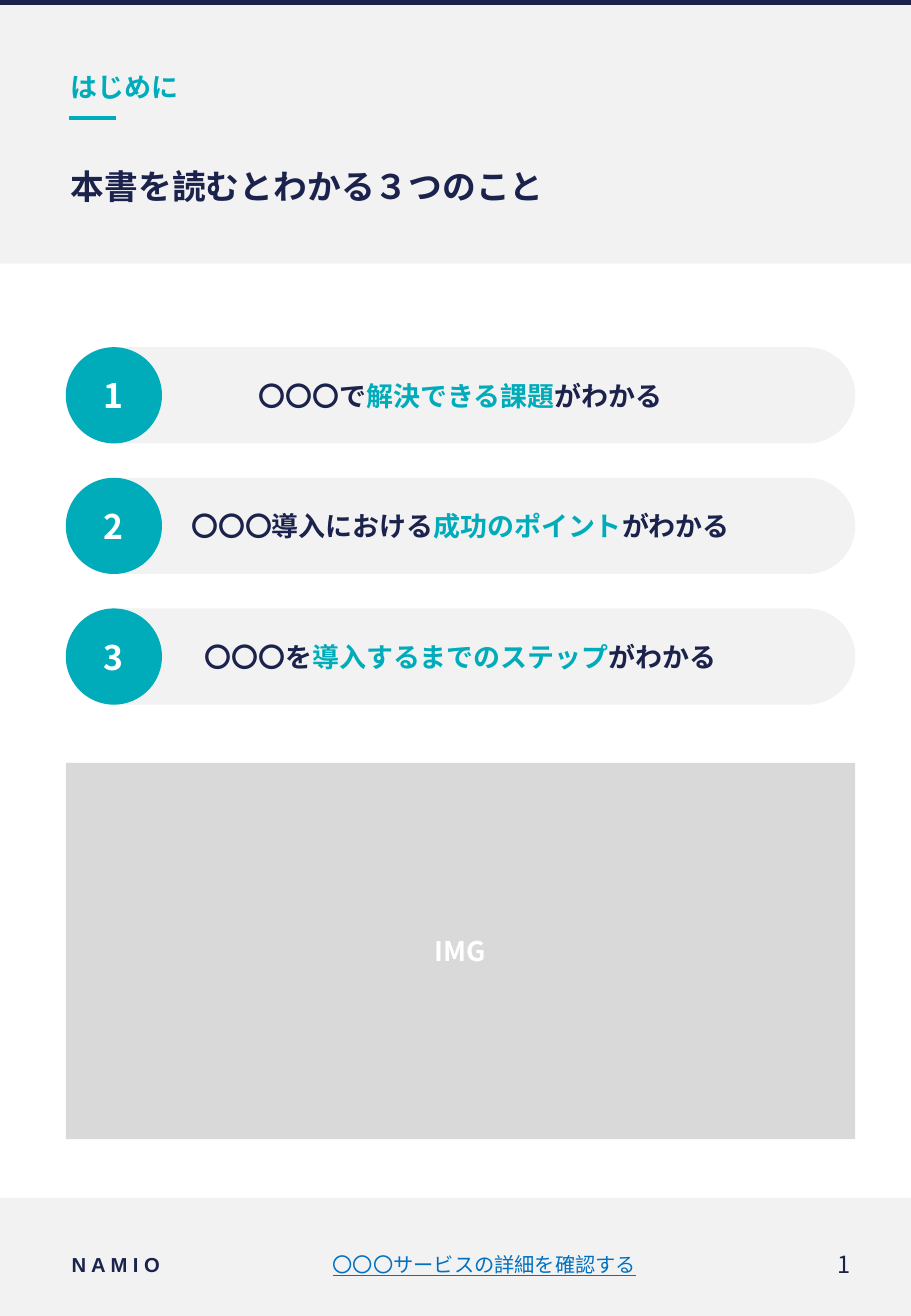
import pptx
import pptx.dml.color
import pptx.enum.shapes
import pptx.enum.text
import pptx.oxml.ns
import pptx.util
from lxml import etree

Pt = pptx.util.Pt
Shape = pptx.enum.shapes.MSO_SHAPE
Align = pptx.enum.text.PP_ALIGN

COLORS = {
    "navy": "1B224C",
    "teal": "00ACBA",
    "pale": "F2F2F2",
    "gray": "D9D9D9",
    "link": "0070C0",
    "white": "FFFFFF",
}
LATIN, JAPANESE = "Arial", "Noto Sans CJK JP"
PAGE_WIDTH, PAGE_HEIGHT = 540, 779.76
LEFT, CONTENT_WIDTH = 39, 468
ROW_TOP, ROW_HEIGHT, ROW_PITCH = 205.7, 57, 77.4
FOOTER_TOP = 709.8
THIN_INSET, WIDE_INSET = (2.9, 2.9), (7.2, 3.6)

# Each point is a list of (words, color) runs
POINTS = [
    [("〇〇〇で", "navy"), ("解決できる課題", "teal"), ("がわかる", "navy")],
    [("〇〇〇導入における", "navy"), ("成功のポイント", "teal"), ("がわかる", "navy")],
    [("〇〇〇を", "navy"), ("導入するまでのステップ", "teal"), ("がわかる", "navy")],
]


def rgb(name):
    return pptx.dml.color.RGBColor.from_string(COLORS[name])


def add_child(parent, tag, **attributes):
    return etree.SubElement(parent, pptx.oxml.ns.qn(tag), attributes)


def write(box, runs, size, align=Align.LEFT, font=LATIN, bold=True,
          underline=None, inset=THIN_INSET, wrap=True):
    """Fill the box with one paragraph made of (words, color) runs."""
    frame = box.text_frame
    frame.word_wrap = wrap
    frame.auto_size = pptx.enum.text.MSO_AUTO_SIZE.NONE
    frame.vertical_anchor = pptx.enum.text.MSO_ANCHOR.MIDDLE
    frame.margin_left = frame.margin_right = Pt(inset[0])
    frame.margin_top = frame.margin_bottom = Pt(inset[1])
    para = frame.paragraphs[0]
    para.alignment = align
    for words, color in runs:
        span = para.add_run()
        span.text = words
        span.font.size = Pt(size)
        span.font.bold = bold
        span.font.underline = underline
        span.font.color.rgb = rgb(color)
        span.font.name = font
        add_child(span.font._element, "a:ea", typeface=JAPANESE)
    return para


def add_block(page, kind, left, top, width, height, color):
    block = page.shapes.add_shape(kind, Pt(left), Pt(top), Pt(width), Pt(height))
    block.shadow.inherit = False
    block.fill.solid()
    block.fill.fore_color.rgb = rgb(color)
    block.line.fill.background()
    return block


def add_label(page, left, width, words, color, size, **style):
    box = page.shapes.add_textbox(Pt(left), Pt(738), Pt(width), Pt(22.3))
    write(box, [(words, color)], size, **style)


def place(page, holder, top, width, height):
    """Move a placeholder and bring it in front of the bands."""
    holder.left, holder.top = Pt(LEFT), Pt(top)
    holder.width, holder.height = Pt(width), Pt(height)
    page.shapes._spTree.append(holder._element)


def add_bands(page):
    for top, height, color in [(0, 156.2, "pale"), (0, 2.9, "navy"),
                               (FOOTER_TOP, PAGE_HEIGHT - FOOTER_TOP, "pale")]:
        add_block(page, Shape.RECTANGLE, 0, top, PAGE_WIDTH, height, color)


def add_heading(page):
    accent = page.shapes.add_connector(
        pptx.enum.shapes.MSO_CONNECTOR.STRAIGHT, Pt(41), Pt(69.9), Pt(69), Pt(69.9))
    accent.line.color.rgb = rgb("teal")
    accent.line.width = Pt(2.5)
    add_child(accent._element.spPr, "a:effectLst")

    section = page.placeholders[1]
    place(page, section, 37.4, CONTENT_WIDTH, 28.1)
    para = write(section, [("はじめに", "teal")], 16)
    para.space_before = Pt(7.5)
    properties = para._p.get_or_add_pPr()
    properties.set("marL", "0")
    properties.set("indent", "0")
    add_child(properties, "a:buNone")

    title = page.shapes.title
    place(page, title, 81.4, CONTENT_WIDTH, 57)
    write(title, [("本書を読むとわかる３つのこと", "navy")], 20)


def add_point(page, number, runs):
    top = ROW_TOP + (number - 1) * ROW_PITCH
    pill = add_block(page, Shape.ROUNDED_RECTANGLE,
                     LEFT, top, CONTENT_WIDTH, ROW_HEIGHT, "pale")
    pill.adjustments[0] = 0.5
    write(pill, runs, 16, align=Align.CENTER, inset=WIDE_INSET)
    badge = add_block(page, Shape.OVAL, LEFT, top, ROW_HEIGHT, ROW_HEIGHT, "teal")
    write(badge, [(str(number), "white")], 20, align=Align.CENTER,
          font=JAPANESE, inset=WIDE_INSET)


def add_footer(page):
    add_label(page, 39.6, 113, "N A M I O", "navy", 12, wrap=False)
    add_label(page, 152.6, 269.3, "〇〇〇サービスの詳細を確認する", "link", 12,
              align=Align.CENTER, bold=False, underline=True)
    add_label(page, 421.9, 85, "1", "navy", 14,
              align=Align.RIGHT, font=JAPANESE, bold=False)


def main():
    deck = pptx.Presentation()
    deck.slide_width, deck.slide_height = Pt(PAGE_WIDTH), Pt(PAGE_HEIGHT)
    page = deck.slides.add_slide(deck.slide_layouts[1])

    add_bands(page)
    add_heading(page)

    # Three numbered points
    for number, runs in enumerate(POINTS, start=1):
        add_point(page, number, runs)

    # Image area
    image_area = add_block(page, Shape.RECTANGLE, LEFT, 452, CONTENT_WIDTH, 223, "gray")
    write(image_area, [("IMG", "white")], 16, align=Align.CENTER, font=JAPANESE)

    add_footer(page)
    deck.save("out.pptx")


if __name__ == "__main__":
    main()
